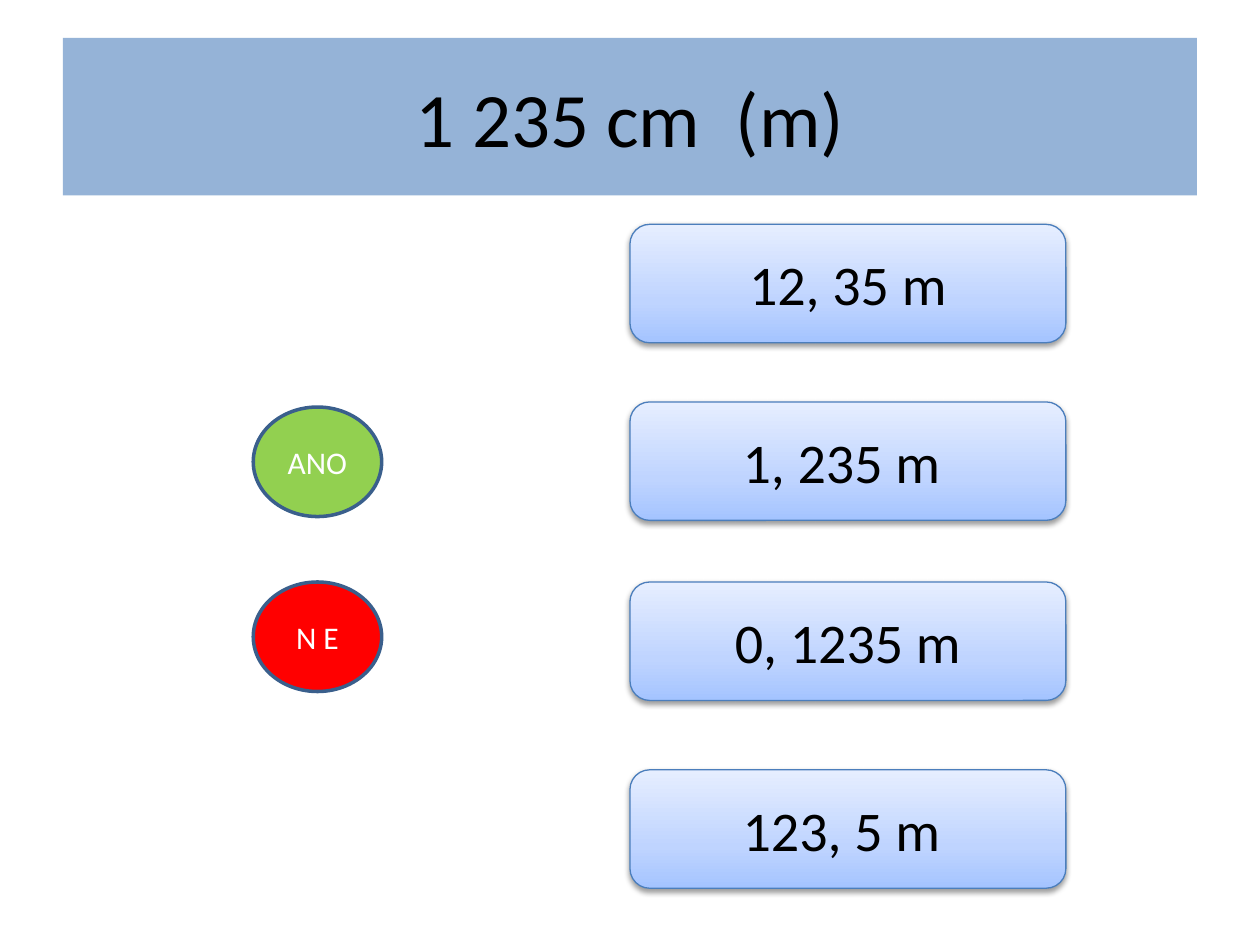
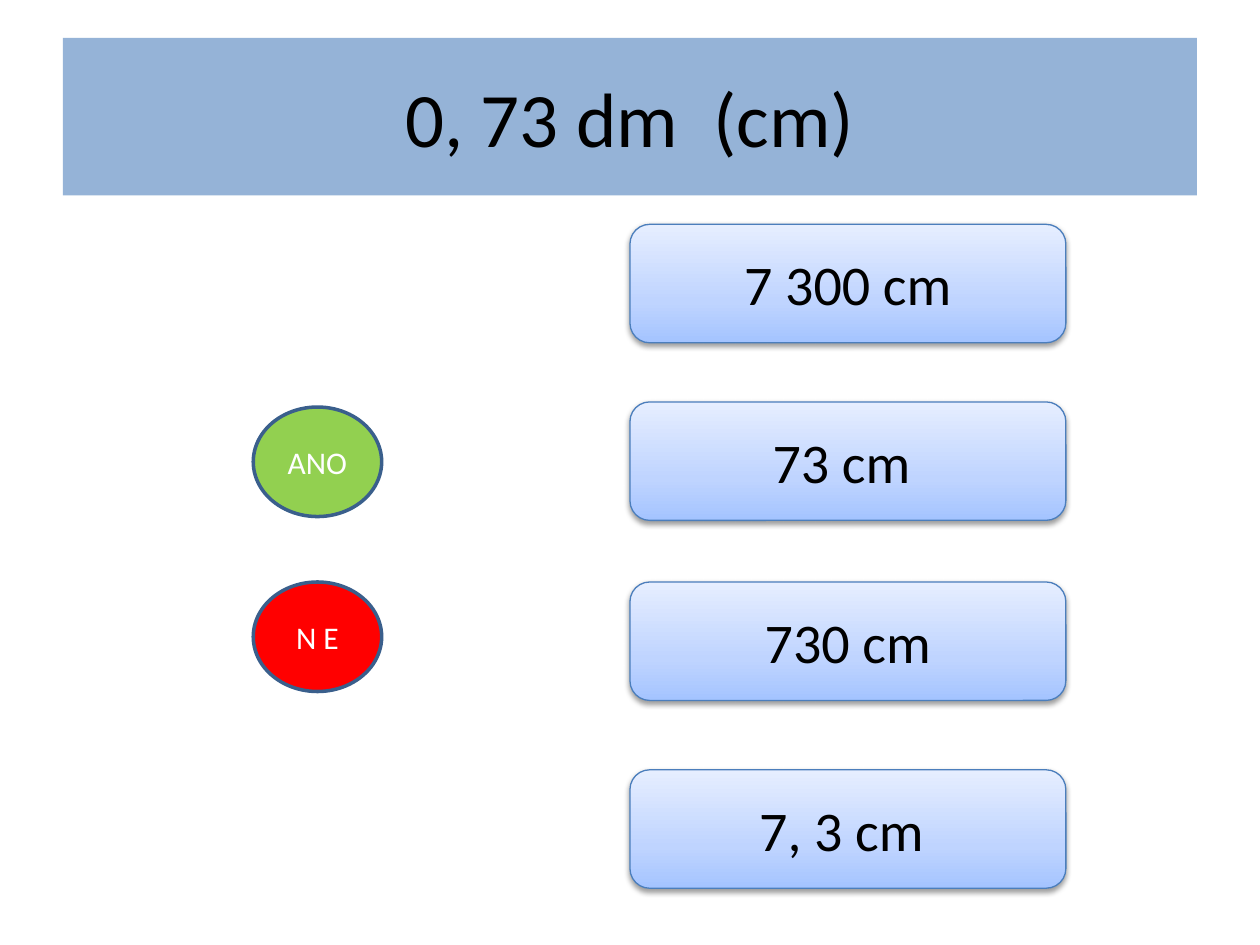
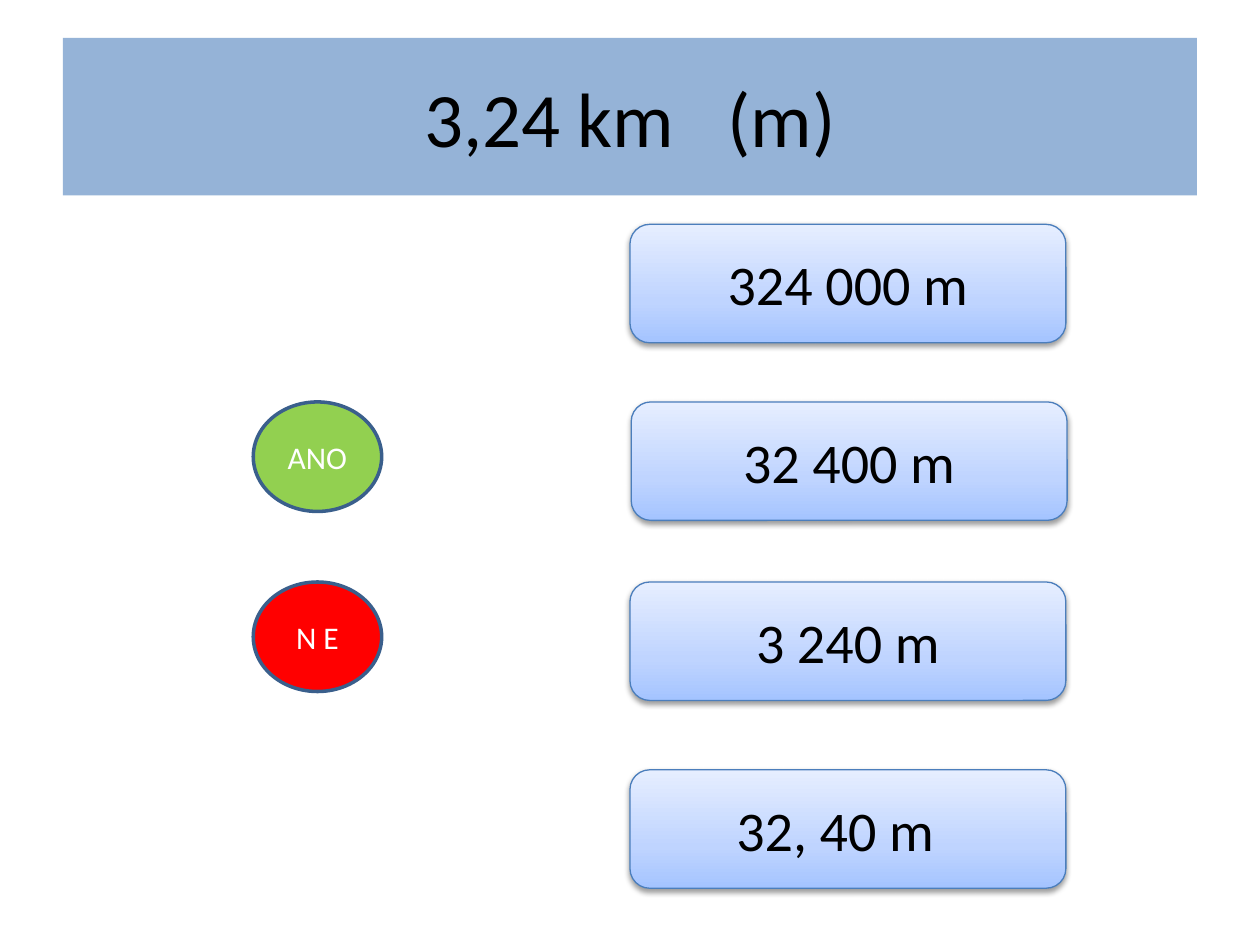
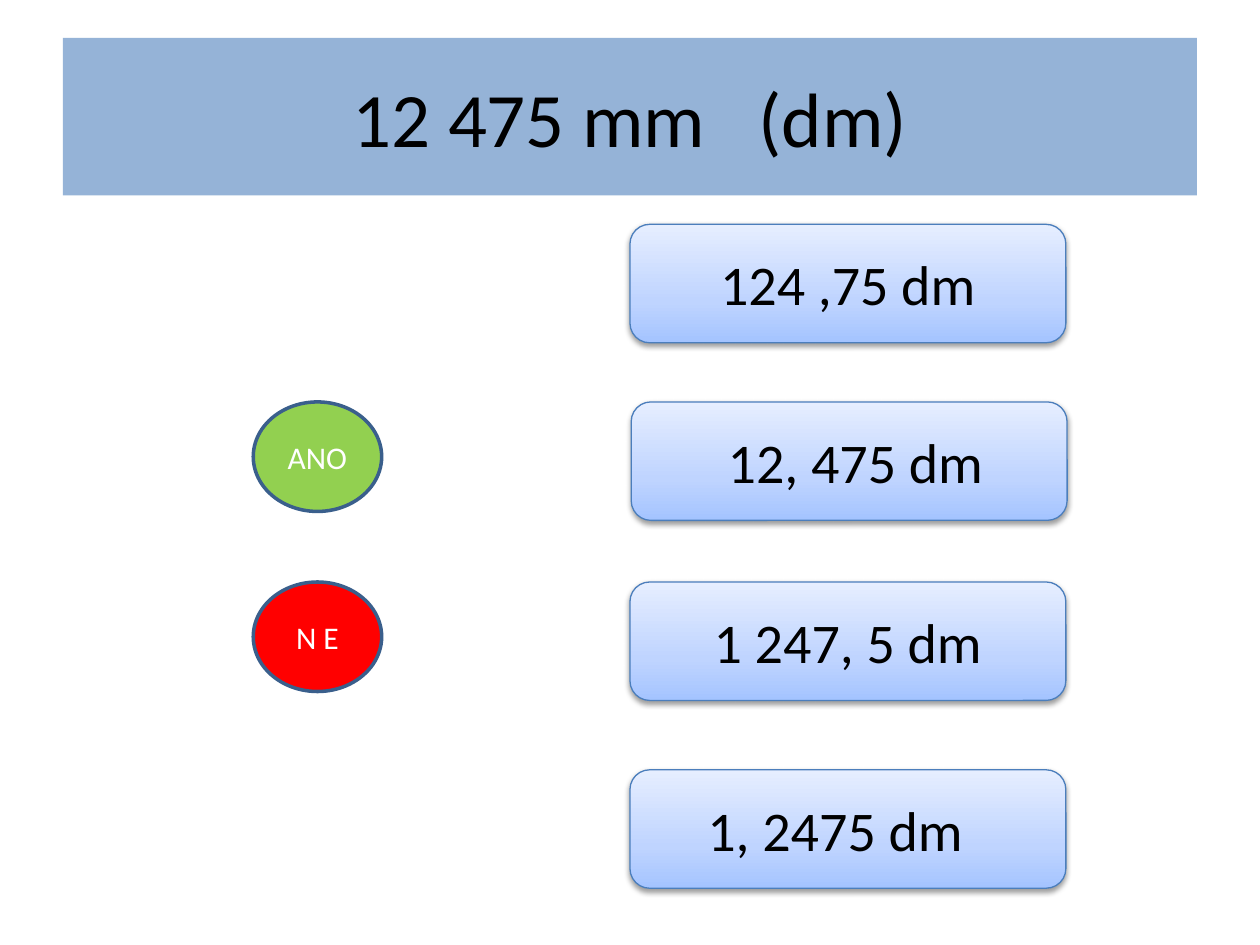
from copy import deepcopy

from lxml.etree import SubElement
from pptx import Presentation
from pptx.dml.color import RGBColor
from pptx.enum.shapes import MSO_SHAPE
from pptx.enum.text import MSO_ANCHOR, PP_ALIGN
from pptx.oxml.ns import qn
from pptx.util import Pt

FONT = "Calibri"
BLACK, WHITE = "000000", "FFFFFF"
BAND, GREEN, RED = "95B3D7", "92D050", "FF0000"
BADGE_LINE, ANSWER_LINE = "3A5F8C", "4B7EBC"
ANSWER_STOPS = [(0, "A4C4FF"), (0.35, "BFD4FF"), (1, "E6EEFF")]
ANSWER_LEFT, ANSWER_TOPS = 360, [128.2, 229.7, 332.6, 439.9]
BADGE_LEFT, NO_TOP = 144.7, 332.6
INSET = 7.2

# quantity, unit, gap between them, top of the yes badge, left of the second
# answer, answers with their extra left (+) or right (-) inset
QUESTIONS = [
    ("1 235 cm", "(m)", 10, 232.6, 360,
     [("12, 35 m", 0), ("1, 235 m", -7.2), ("0, 1235 m", 0), ("123, 5 m", -7.2)]),
    ("0, 73 dm", "(cm)", 10, 232.6, 360,
     [("7 300 cm", 0), ("73 cm", -7.2), ("730 cm", 0), ("7, 3 cm", -7.2)]),
    ("3,24 km", "(m)", 20, 229.7, 360.7,
     [("324 000 m", 0), ("32 400 m", 0), ("3 240 m", 0), ("32, 40 m", -14.4)]),
    ("12 475 mm", "(dm)", 20, 229.7, 360.7,
     [("124 ,75 dm", 0), ("12, 475 dm", 7.2), ("1 247, 5 dm", 0), ("1, 2475 dm", -14.4)]),
]


def color(hex_code):
    """Turn a hex string into a colour."""
    return RGBColor.from_string(hex_code)


def write(paragraph, text, size=18, ink=BLACK, spacing=0):
    """Add a formatted run to a centred paragraph."""
    paragraph.alignment = PP_ALIGN.CENTER
    run = paragraph.add_run()
    run.text = text
    run.font.name = FONT
    run.font.size = Pt(size)
    run.font.color.rgb = color(ink)
    if spacing:
        run.font._element.set("spc", str(spacing * 100))


class QuizDeck:
    """Hold the quiz style and the current slide."""

    def __init__(self):
        """Start an empty 4:3 presentation."""
        self.presentation = Presentation()
        self.presentation.slide_width = Pt(720)
        self.presentation.slide_height = Pt(540)
        self.slide = None

    def new_slide(self):
        """Add a blank slide and make it current."""
        self.slide = self.presentation.slides.add_slide(self.presentation.slide_layouts[6])

    def panel(self, kind, left, top, width, height, fill=None, line=None, weight=1):
        """Add a plain shape with vertically centred text."""
        panel = self.slide.shapes.add_shape(kind, Pt(left), Pt(top), Pt(width), Pt(height))
        panel.shadow.inherit = False
        if fill:
            panel.fill.solid()
            panel.fill.fore_color.rgb = color(fill)
        if line:
            panel.line.color.rgb = color(line)
            panel.line.width = Pt(weight)
        else:
            panel.line.fill.background()
        panel.text_frame.word_wrap = True
        panel.text_frame.vertical_anchor = MSO_ANCHOR.MIDDLE
        return panel

    def title(self, quantity, unit, gap):
        """Add the title band with a widened gap before the unit."""
        band = self.panel(MSO_SHAPE.RECTANGLE, 36, 21.6, 648, 90, BAND)
        heading = band.text_frame.paragraphs[0]
        write(heading, quantity, size=44)
        write(heading, " ", size=44, spacing=gap)
        write(heading, unit, size=44)

    def badge(self, label, top, fill):
        """Add a round yes or no badge."""
        badge = self.panel(MSO_SHAPE.OVAL, BADGE_LEFT, top, 73.4, 62.6, fill, BADGE_LINE, 2)
        write(badge.text_frame.paragraphs[0], label, ink=WHITE)

    def answer(self, label, left, top, indent):
        """Add an answer card with a gradient and a soft shadow."""
        card = self.panel(MSO_SHAPE.ROUNDED_RECTANGLE, left, top, 249.1, 67.7,
                          line=ANSWER_LINE, weight=0.75)
        self.shade(card)
        self.cast_shadow(card)
        card.text_frame.margin_left = Pt(INSET + max(indent, 0))
        card.text_frame.margin_right = Pt(INSET + max(-indent, 0))
        write(card.text_frame.paragraphs[0], label, size=32)

    def shade(self, card):
        """Fill a card with the three-stop gradient, rising from the bottom."""
        card.fill.gradient()
        card.fill.gradient_angle = 90
        stop_list = card._element.spPr.find(".//" + qn("a:gsLst"))
        stop_list.insert(1, deepcopy(stop_list[0]))
        for stop, (position, tint) in zip(card.fill.gradient_stops, ANSWER_STOPS):
            stop.position = position
            stop.color.rgb = color(tint)

    def cast_shadow(self, card):
        """Put a soft shadow just below a card."""
        effects = card._element.spPr.find(qn("a:effectLst"))
        shadow = SubElement(effects, qn("a:outerShdw"), blurRad=str(Pt(3.1)),
                            dist=str(Pt(1.6)), dir="5400000", rotWithShape="0")
        ink = SubElement(shadow, qn("a:srgbClr"), val=BLACK)
        SubElement(ink, qn("a:alpha"), val="38000")


def main():
    """Build one slide for each question."""
    deck = QuizDeck()
    for quantity, unit, gap, yes_top, second_left, answers in QUESTIONS:
        deck.new_slide()
        deck.title(quantity, unit, gap)
        deck.badge("ANO", yes_top, GREEN)
        deck.badge("N E", NO_TOP, RED)
        lefts = [ANSWER_LEFT, second_left, ANSWER_LEFT, ANSWER_LEFT]
        for (label, indent), left, top in zip(answers, lefts, ANSWER_TOPS):
            deck.answer(label, left, top, indent)
    deck.presentation.save("out.pptx")


if __name__ == "__main__":
    main()
